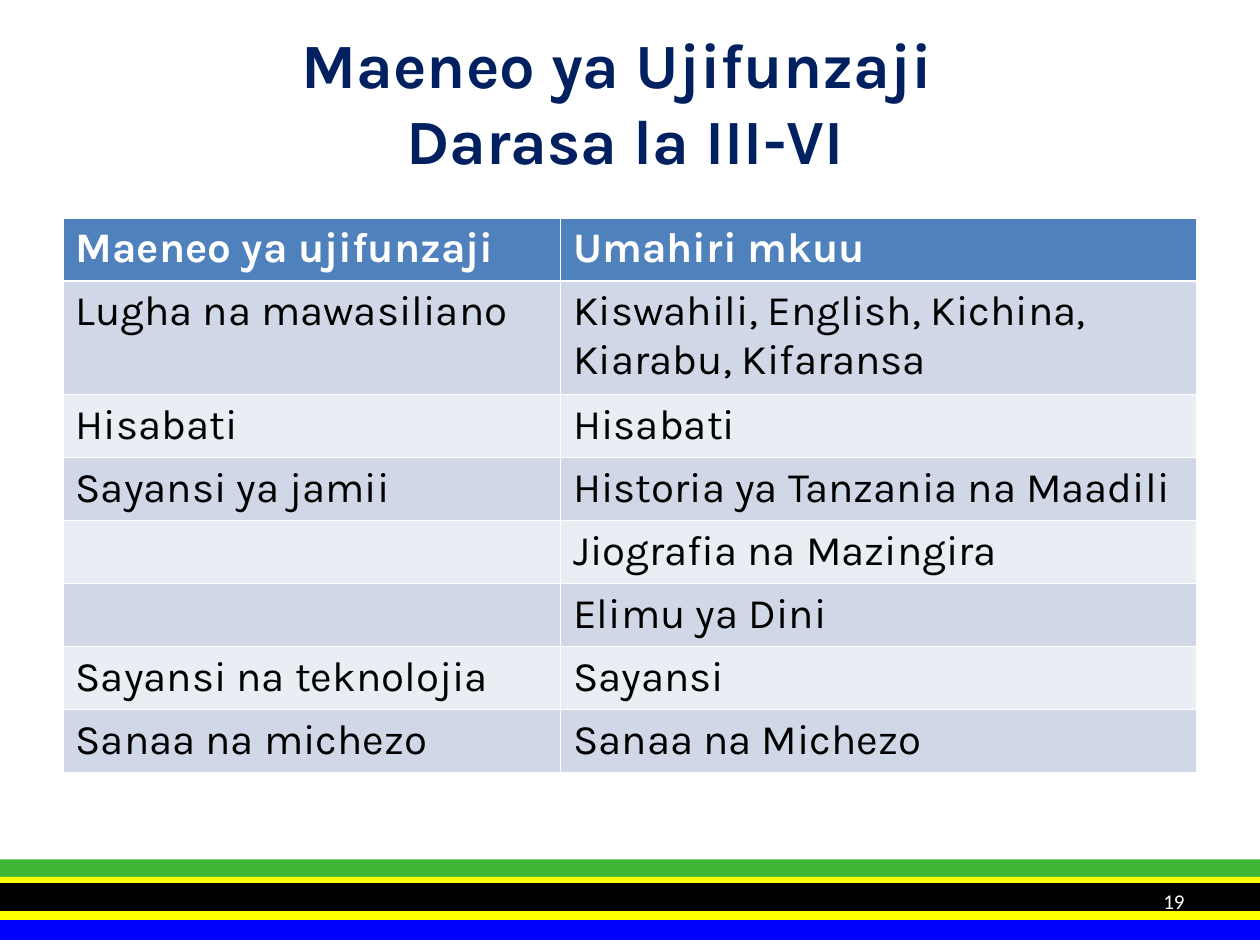
from dataclasses import dataclass

from pptx import Presentation
from pptx.dml.color import RGBColor
from pptx.enum.shapes import MSO_SHAPE as Shape
from pptx.enum.text import MSO_ANCHOR as Anchor, PP_ALIGN as Align
from pptx.util import Inches, Pt


@dataclass(frozen=True)
class Theme:
    navy: str = "002060"
    white: str = "FFFFFF"
    black: str = "000000"
    head: str = "4F81BD"
    bands: tuple = ("D0D8E8", "E9EDF4")
    blue: str = "0000FF"
    green: str = "3FB636"
    yellow: str = "FFFF00"
    face: str = "Karla"
    plain: str = "Calibri"
    title: int = 36
    body: int = 24
    small: int = 12


THEME = Theme()

ROWS = [
    ("Maeneo ya ujifunzaji", "Umahiri mkuu"),
    ("Lugha na mawasiliano", "Kiswahili, English, Kichina, Kiarabu, Kifaransa"),
    ("Hisabati", "Hisabati"),
    ("Sayansi ya jamii", "Historia ya Tanzania na Maadili"),
    ("", "Jiografia na Mazingira"),
    ("", "Elimu ya Dini"),
    ("Sayansi na teknolojia", "Sayansi"),
    ("Sanaa na michezo", "Sanaa na Michezo"),
]


def paint(fill, color):
    fill.solid()
    fill.fore_color.rgb = RGBColor.from_string(color)


def style(font, color, **values):
    for key, value in values.items():
        setattr(font, key, value)
    font.color.rgb = RGBColor.from_string(color)


def add_text(slide, box, text, align, color, **values):
    frame = slide.shapes.add_textbox(*map(Inches, box)).text_frame
    frame.word_wrap = True
    frame.vertical_anchor = Anchor.MIDDLE
    para = frame.paragraphs[0]
    para.text = text
    para.alignment = align
    style(para.font, color, **values)


def add_flag(slide, box):
    """Stack the flag stripes, given as (offset, height), over the box."""
    left, top, width = box
    stripes = [
        (0.41, 0.23, THEME.blue),
        (0, 0.22, THEME.green),
        (0.14, 0.11, THEME.yellow),
        (0.37, 0.11, THEME.yellow),
        (0.19, 0.22, THEME.black),
    ]
    for drop, height, color in stripes:
        place = map(Inches, (left, top + drop, width, height))
        bar = slide.shapes.add_shape(Shape.RECTANGLE, *place)
        bar.shadow.inherit = False
        bar.line.fill.background()
        paint(bar.fill, color)


def add_areas(slide, box, widths):
    frame = slide.shapes.add_table(len(ROWS), len(widths), *map(Inches, box))
    table = frame.table
    for column, width in zip(table.columns, widths):
        column.width = Inches(width)
    for r, words in enumerate(ROWS):
        top = r == 0
        fill = THEME.head if top else THEME.bands[(r - 1) % 2]
        color = THEME.white if top else THEME.black
        for c, word in enumerate(words):
            cell = table.cell(r, c)
            paint(cell.fill, fill)
            cell.text = word
            style(cell.text_frame.paragraphs[0].font, color,
                  name=THEME.face, size=Pt(THEME.body), bold=top)


def main():
    deck = Presentation()
    deck.slide_width, deck.slide_height = Inches(10), Inches(7.5)
    slide = deck.slides.add_slide(deck.slide_layouts[6])
    add_flag(slide, (0, 6.82, 10))
    add_text(slide, (1.3, 0.3, 7.32, 1.01),
             "Maeneo ya Ujifunzaji \vDarasa la III-VI", Align.CENTER,
             THEME.navy, name=THEME.face, size=Pt(THEME.title), bold=True)
    add_areas(slide, (0.5, 1.73, 9, 0.41 * len(ROWS)), (3.95, 5.05))
    add_text(slide, (7.17, 6.95, 2.33, 0.4), "19", Align.RIGHT,
             THEME.white, name=THEME.plain, size=Pt(THEME.small))
    deck.save("out.pptx")


if __name__ == "__main__":
    main()
